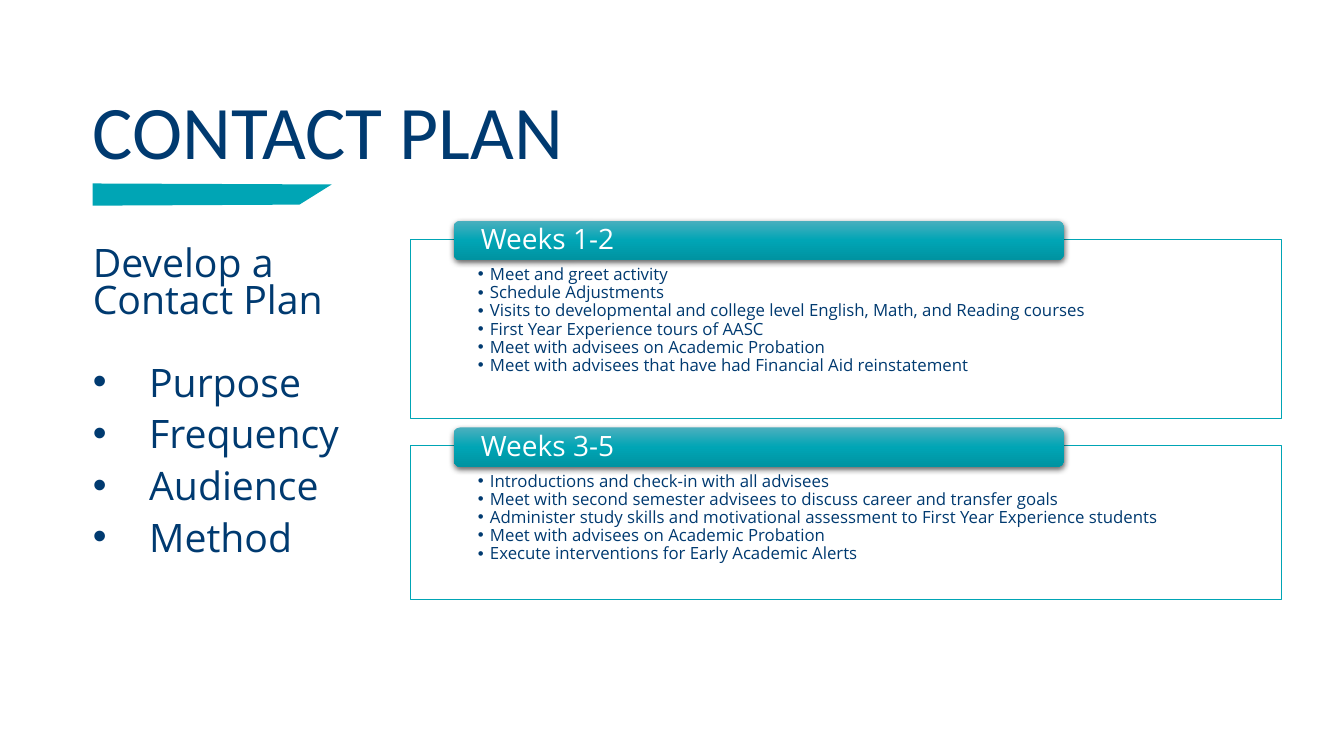
from copy import deepcopy

from lxml.etree import SubElement
from pptx import Presentation
from pptx.dml.color import RGBColor
from pptx.enum.shapes import MSO_SHAPE
from pptx.enum.text import MSO_ANCHOR, MSO_AUTO_SIZE, PP_ALIGN
from pptx.oxml.ns import qn
from pptx.util import Inches, Pt

NAVY, TEAL, WHITE = "003A70", "00A5B5", "FFFFFF"
HEADER_GRADIENT = [(0, "4BAFBE"), (0.5, TEAL), (1, "0093A1")]

TOPICS = ["Purpose", "Frequency", "Audience", "Method"]
PERIODS = [
    ("Weeks 1-2", 1.78, [
        "Meet and greet activity",
        "Schedule Adjustments",
        "Visits to developmental and college level English, Math, and Reading courses",
        "First Year Experience tours of AASC",
        "Meet with advisees on Academic Probation",
        "Meet with advisees that have had Financial Aid reinstatement",
    ]),
    ("Weeks 3-5", 1.53, [
        "Introductions and check-in with all advisees",
        "Meet with second semester advisees to discuss career and transfer goals",
        "Administer study skills and motivational assessment to First Year Experience students",
        "Meet with advisees on Academic Probation",
        "Execute interventions for Early Academic Alerts",
    ]),
]


def rgb(hex_code):
    return RGBColor.from_string(hex_code)


def assign(target, values):
    for name, value in values.items():
        setattr(target, name, value)


def place(shape, left, top, width, height):
    assign(shape, {"left": Inches(left), "top": Inches(top),
                   "width": Inches(width), "height": Inches(height)})


class PlanSlide:
    body_font = "Open Sans"
    title_font = "Calibri"

    def __init__(self, presentation):
        self.slide = presentation.slides.add_slide(presentation.slide_layouts[1])

    def frame(self, shape, anchor, margins=(0.1, 0.05, 0.1, 0.05)):
        left, top, right, bottom = map(Inches, margins)
        assign(shape.text_frame, {
            "auto_size": MSO_AUTO_SIZE.NONE, "word_wrap": True,
            "vertical_anchor": anchor, "margin_left": left, "margin_top": top,
            "margin_right": right, "margin_bottom": bottom})
        return shape.text_frame

    def set_text(self, paragraph, text, size, color=NAVY, font=None, spacing=0.9,
                 before=0, indent=0, level=0):
        paragraph.text = text
        assign(paragraph, {
            "alignment": PP_ALIGN.LEFT, "level": level, "line_spacing": spacing,
            "space_before": Pt(before), "space_after": Pt(0)})
        for run in paragraph.runs:
            assign(run.font, {"size": Pt(size), "name": font or self.body_font})
            run.font.color.rgb = rgb(color)
        # Bullet and hanging indent
        properties = paragraph._p.get_or_add_pPr()
        properties.set("marL", str(Inches(indent)))
        properties.set("indent", str(-Inches(indent)))
        if indent:
            SubElement(properties, qn("a:buFont"), typeface="Arial")
            SubElement(properties, qn("a:buChar"), char="•")
        else:
            SubElement(properties, qn("a:buNone"))

    def ribbon(self, points, color):
        start, *rest = [(Inches(x), Inches(y)) for x, y in points]
        builder = self.slide.shapes.build_freeform(*start)
        builder.add_line_segments(rest, close=True)
        ribbon = builder.convert_to_shape()
        ribbon.shadow.inherit = False
        ribbon.fill.solid()
        ribbon.fill.fore_color.rgb = rgb(color)
        ribbon.line.fill.background()

    def title(self, text, box):
        title = self.slide.shapes.title
        place(title, *box)
        frame = self.frame(title, MSO_ANCHOR.BOTTOM)
        self.set_text(frame.paragraphs[0], text, 54, font=self.title_font)

    def topics(self, lead, items, box):
        body = self.slide.placeholders[1]
        place(body, *box)
        frame = self.frame(body, MSO_ANCHOR.TOP)
        self.set_text(frame.paragraphs[0], lead, 28, spacing=0.8, before=10)
        for number, item in enumerate(items):
            self.set_text(frame.add_paragraph(), item, 28, spacing=0.8,
                          before=10 if number else 32, indent=0.56)

    def shape(self, kind, box):
        shape = self.slide.shapes.add_shape(kind, *map(Inches, box))
        shape.shadow.inherit = False
        return shape

    def panel(self, items, box):
        panel = self.shape(MSO_SHAPE.RECTANGLE, box)
        panel.fill.solid()
        panel.fill.fore_color.rgb = rgb(WHITE)
        tint = panel._element.spPr.find(qn("a:solidFill"))[0]
        SubElement(tint, qn("a:alpha"), val="90000")
        panel.line.color.rgb = rgb(TEAL)
        panel.line.width = Pt(0.5)
        frame = self.frame(panel, MSO_ANCHOR.TOP, (0.67, 0.27, 0.67, 0.09))
        for number, item in enumerate(items):
            paragraph = frame.add_paragraph() if number else frame.paragraphs[0]
            self.set_text(paragraph, item, 12, indent=0.12, level=1)

    def header(self, text, box):
        header = self.shape(MSO_SHAPE.ROUNDED_RECTANGLE, box)
        header.line.fill.background()
        # Three-stop gradient running downwards
        header.fill.gradient()
        header.fill.gradient_angle = 270
        properties = header._element.spPr
        stop_list = properties.find(".//" + qn("a:gsLst"))
        stop_list.append(deepcopy(stop_list[0]))
        for stop, (position, color) in zip(header.fill.gradient_stops, HEADER_GRADIENT):
            stop.position = position
            stop.color.rgb = rgb(color)
        # Soft shadow below
        shadow = SubElement(properties.find(qn("a:effectLst")), qn("a:outerShdw"),
                            blurRad=str(Pt(4.5)), dist=str(Pt(1.5)),
                            dir="5400000", algn="ctr", rotWithShape="0")
        black = SubElement(shadow, qn("a:srgbClr"), val="000000")
        SubElement(black, qn("a:alpha"), val="63000")
        frame = self.frame(header, MSO_ANCHOR.MIDDLE, (0.25, 0, 0.25, 0))
        self.set_text(frame.paragraphs[0], text, 20, color=WHITE)


def main():
    presentation = Presentation()
    assign(presentation, {"slide_width": Inches(13.33), "slide_height": Inches(7.5)})
    plan = PlanSlide(presentation)

    # Heading and accent
    plan.title("CONTACT PLAN", (0.82, 0.7, 11.69, 1.09))
    plan.ribbon([(0.92, 1.82), (3.29, 1.83), (2.97, 2.03), (0.92, 2.04)], TEAL)

    # Topics on the left
    plan.topics("Develop a \nContact Plan", TOPICS, (0.82, 2.4, 11.69, 4.27))

    # Periods stacked on the right
    top, gap = 2.37, 0.27
    for period, height, activities in PERIODS:
        plan.panel(activities, (4.07, top, 8.64, height))
        plan.header(period, (4.5, top - 0.18, 6.05, 0.39))
        top += height + gap

    presentation.save("out.pptx")


if __name__ == "__main__":
    main()
